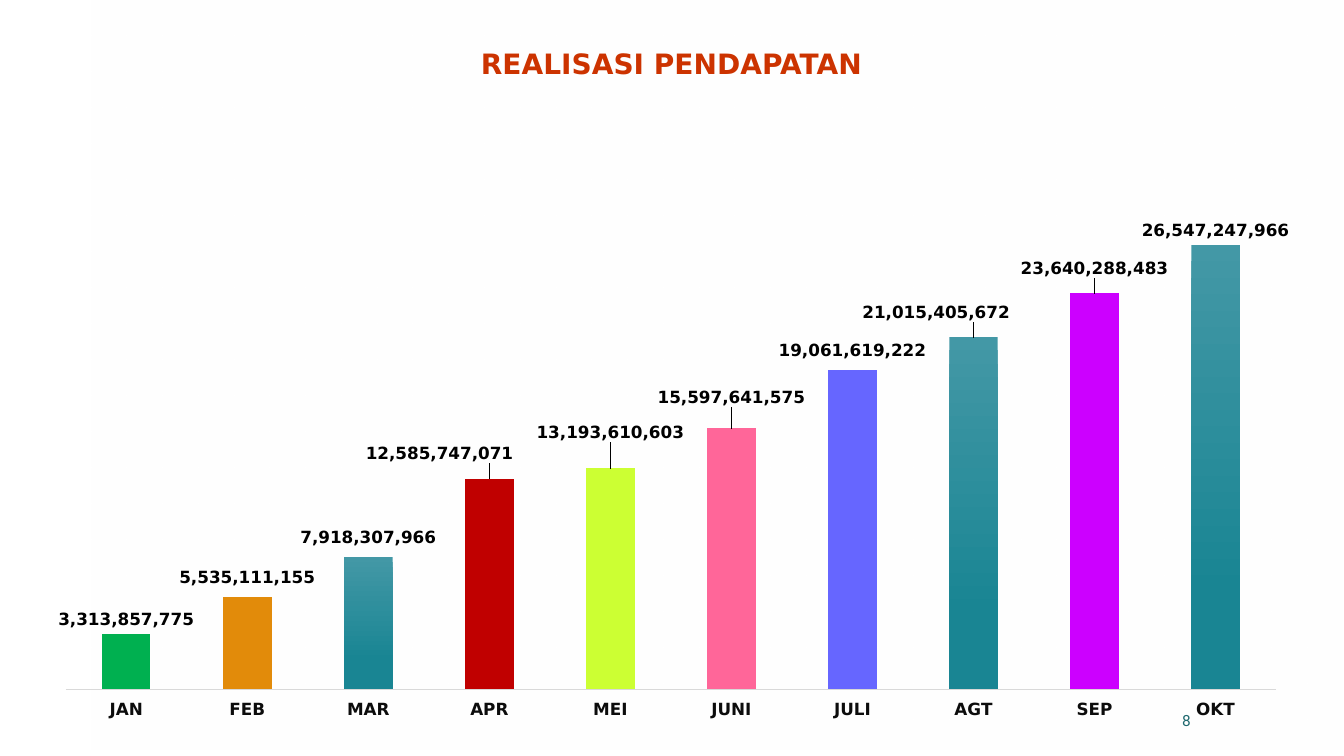
from lxml import etree
from pptx import Presentation
from pptx.chart.data import CategoryChartData
from pptx.dml.color import RGBColor
from pptx.enum.chart import XL_CHART_TYPE, XL_LABEL_POSITION, XL_TICK_LABEL_POSITION, XL_TICK_MARK
from pptx.enum.shapes import MSO_SHAPE
from pptx.enum.text import MSO_ANCHOR, PP_ALIGN
from pptx.oxml.ns import qn
from pptx.util import Inches, Pt

COLUMNS = XL_CHART_TYPE.COLUMN_CLUSTERED
OUTSIDE = XL_LABEL_POSITION.OUTSIDE_END
LABELS_LOW = XL_TICK_LABEL_POSITION.LOW
NO_TICK = XL_TICK_MARK.NONE
RECT = MSO_SHAPE.RECTANGLE
MIDDLE, BOTTOM = MSO_ANCHOR.MIDDLE, MSO_ANCHOR.BOTTOM
CENTER, RIGHT = PP_ALIGN.CENTER, PP_ALIGN.RIGHT

WHITE = RGBColor(0xFF, 0xFF, 0xFF)
BLACK = RGBColor(0x00, 0x00, 0x00)
AXIS_TEXT = RGBColor(0x0C, 0x0C, 0x0C)
AXIS_LINE = RGBColor(0xD9, 0xD9, 0xD9)
RED_TITLE = RGBColor(0xCC, 0x33, 0x00)
TEAL_DARK = RGBColor(0x16, 0x4B, 0x4F)
TEAL_NUMBER = RGBColor(0x1F, 0x69, 0x6F)
TEAL_TOP = RGBColor(0x43, 0x98, 0xA6)
TEAL_BOTTOM = RGBColor(0x19, 0x85, 0x93)
GREEN = RGBColor(0x00, 0xB0, 0x50)
ORANGE = RGBColor(0xE2, 0x8B, 0x0A)
CRIMSON = RGBColor(0xC0, 0x00, 0x00)
LIME = RGBColor(0xCC, 0xFF, 0x33)
PINK = RGBColor(0xFF, 0x66, 0x99)
INDIGO = RGBColor(0x66, 0x66, 0xFF)
VIOLET = RGBColor(0xCC, 0x00, 0xFF)

NUMBER_FORMAT = '_(* #,##0_);_(* \\(#,##0\\);_(* "-"_);_(@_)'

# Month, revenue, bar colour (None keeps the gradient), label shift as chart fractions
REVENUE = [
    ("JAN", 3313857775, GREEN, (0, 0)),
    ("FEB", 5535111155, ORANGE, (0, -0.01)),
    ("MAR", 7918307966, None, (0, -0.01)),
    ("APR", 12585747071, CRIMSON, (-0.04, -0.02)),
    ("MEI", 13193610603, LIME, (0, -0.04)),
    ("JUNI", 15597641575, PINK, (0, -0.03)),
    ("JULI", 19061619222, INDIGO, (0, -0.01)),
    ("AGT", 21015405672, None, (-0.03, -0.02)),
    ("SEP", 23640288483, VIOLET, (0, -0.02)),
    ("OKT", 26547247966, None, (0, 0)),
]


class SlideBuilder:
    heading_font = "DejaVu Sans"
    body_font = "Roboto"

    def __init__(self, slide):
        self.s = slide

    def style(self, font, name, size, color, bold=False):
        font.name, font.size, font.bold = name, Pt(size), bold
        font.color.rgb = color

    def gradient(self, fill, *stops):
        fill.gradient()
        fill.gradient_angle = 270
        for stop, (position, color) in zip(fill.gradient_stops, stops):
            stop.position = position
            stop.color.rgb = color

    def layout(self, **values):
        layout = etree.Element(qn("c:layout"))
        manual = etree.SubElement(layout, qn("c:manualLayout"))
        for tag, value in values.items():
            etree.SubElement(manual, qn(f"c:{tag}")).set("val", str(value))
        return layout

    def veil(self, x, y, w, h, alpha):
        sp = self.s.shapes.add_shape(RECT, Inches(x), Inches(y), Inches(w), Inches(h))
        sp.shadow.inherit = False
        sp.line.fill.background()
        self.gradient(sp.fill, (0, WHITE), (1, WHITE))
        for color, percent in zip(sp.element.spPr.iter(qn("a:srgbClr")), alpha):
            etree.SubElement(color, qn("a:alpha")).set("val", str(percent * 1000))

    def text(self, x, y, w, h, text, name, size, color, align, anchor,
             bold=False, side=0.1, ends=0.05, spacing=1.0):
        tf = self.s.shapes.add_textbox(Inches(x), Inches(y), Inches(w), Inches(h)).text_frame
        tf.word_wrap = True
        tf.vertical_anchor = anchor
        tf.margin_left = tf.margin_right = Inches(side)
        tf.margin_top = tf.margin_bottom = Inches(ends)
        p = tf.paragraphs[0]
        p.text = text
        p.alignment = align
        p.line_spacing = spacing
        self.style(p.runs[0].font, name, size, color, bold)

    def column_chart(self, x, y, w, h, rows):
        data = CategoryChartData(number_format=NUMBER_FORMAT)
        data.categories = [month for month, *_ in rows]
        data.add_series("Series 1", [value for _, value, *_ in rows])
        chart = self.s.shapes.add_chart(
            COLUMNS, Inches(x), Inches(y), Inches(w), Inches(h), data).chart
        chart.has_legend = chart.has_title = False
        self.style(chart.font, self.body_font, 10, TEAL_DARK)

        # Axes
        months = chart.category_axis
        months.major_tick_mark = months.minor_tick_mark = NO_TICK
        months.tick_label_position = LABELS_LOW
        months.format.line.color.rgb = AXIS_LINE
        months.format.line.width = Pt(0.75)
        self.style(months.tick_labels.font, self.heading_font, 12, AXIS_TEXT, True)
        amounts = chart.value_axis
        amounts.minimum_scale, amounts.maximum_scale = 0, 30_000_000_000
        amounts.has_major_gridlines = False
        amounts.visible = False

        # Bars and their labels
        plot = chart.plots[0]
        plot.gap_width = 150
        plot.vary_by_categories = False
        series = plot.series[0]
        series.invert_if_negative = False
        self.gradient(series.format.fill, (0, TEAL_TOP), (0.78, TEAL_BOTTOM))
        labels = series.data_labels
        labels.show_value = True
        labels.position = OUTSIDE
        labels.number_format = NUMBER_FORMAT
        labels.number_format_is_linked = False
        self.style(labels.font, self.heading_font, 12, BLACK, True)
        for i, (_, _, color, _) in enumerate(rows):
            point = series.points[i]
            if color is not None:
                point.format.fill.solid()
                point.format.fill.fore_color.rgb = color
            self.style(point.data_label.font, self.heading_font, 12, BLACK, True)
            point.data_label.position = OUTSIDE

        # Label shifts and plot area
        for label, (*_, (dx, dy)) in zip(chart.element.iter(qn("c:dLbl")), rows):
            if dx or dy:
                label.insert(1, self.layout(x=dx, y=dy))
        area = next(chart.element.iter(qn("c:plotArea")))
        for old in area.findall(qn("c:layout")):
            area.remove(old)
        area.insert(0, self.layout(layoutTarget="inner", xMode="edge", yMode="edge",
                                   x=0.01, y=0.028, w=0.972, h=0.905))


def main():
    prs = Presentation()
    prs.slide_width, prs.slide_height = Inches(13.33), Inches(7.5)
    b = SlideBuilder(prs.slides.add_slide(prs.slide_layouts[6]))

    # Background
    b.veil(0.91, 0, 12.41, 7.5, alpha=(60, 0))

    # Slide number
    b.text(8.8, 6.95, 3.11, 0.4, "8", b.body_font, 11, TEAL_NUMBER, RIGHT, MIDDLE)

    # Monthly revenue
    b.column_chart(0.52, 1.7, 12.36, 5.51, REVENUE)

    # Title
    b.text(0.66, 0.38, 12, 0.49, "REALISASI PENDAPATAN", b.heading_font, 20, RED_TITLE,
           CENTER, BOTTOM, bold=True, side=0.15, ends=0.07, spacing=0.9)

    prs.save("out.pptx")


if __name__ == "__main__":
    main()
